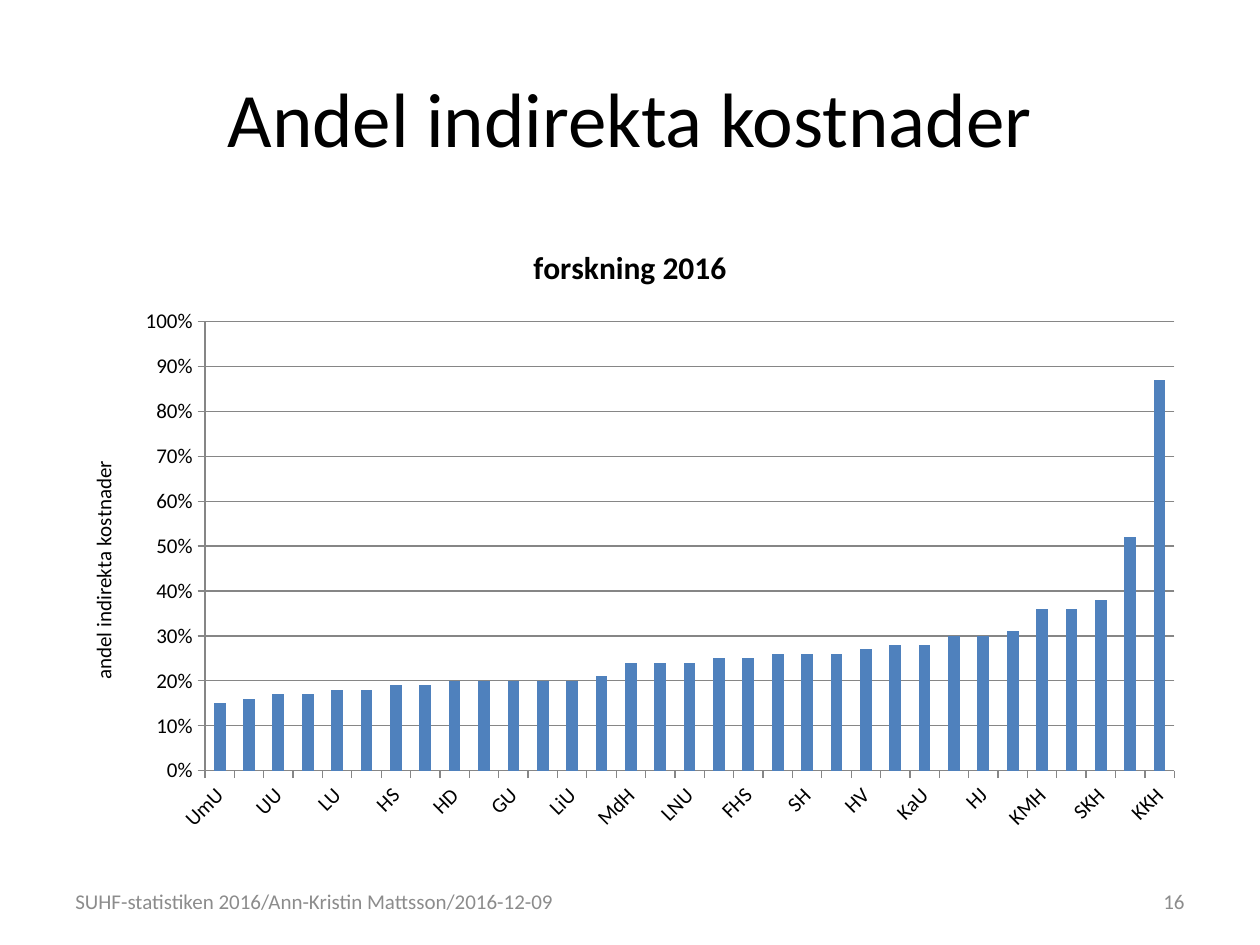
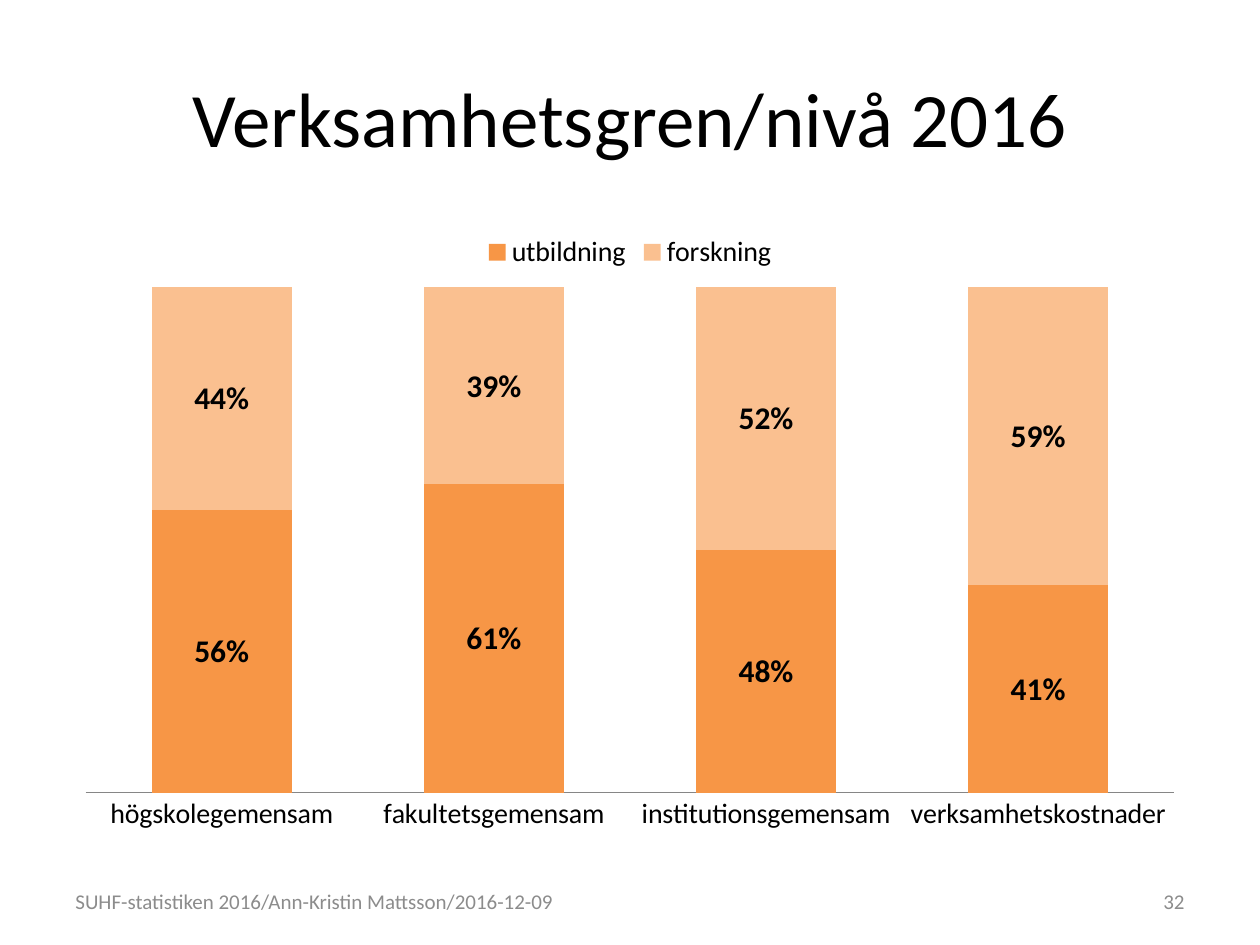
from pptx import Presentation
from pptx.chart.data import CategoryChartData
from pptx.dml.color import RGBColor
from pptx.enum.chart import XL_CHART_TYPE, XL_LEGEND_POSITION, XL_TICK_MARK
from pptx.enum.text import MSO_ANCHOR, PP_ALIGN
from pptx.util import Inches, Pt

FOOTER = "SUHF-statistiken 2016/Ann-Kristin Mattsson/2016-12-09"
UNIVERSITIES = (
    "UmU KI UU GIH LU LTU HS SLU HD CTH GU HH LiU KTH MdH HKr LNU BTH FHS ÖU "
    "SH SU HV HiG KaU MAH HJ MiU KMH HB SKH KF KKH"
).split()
RESEARCH_SHARES = [
    0.15, 0.16, 0.17, 0.17, 0.18, 0.18, 0.19, 0.19, 0.2, 0.2, 0.2,
    0.2, 0.2, 0.21, 0.24, 0.24, 0.24, 0.25, 0.25, 0.26, 0.26, 0.26,
    0.27, 0.28, 0.28, 0.3, 0.3, 0.31, 0.36, 0.36, 0.38, 0.52, 0.87,
]
LEVELS = ["högskolegemensam", "fakultetsgemensam",
          "institutionsgemensam", "verksamhetskostnader"]
EDUCATION_SHARES = [0.56, 0.61, 0.48, 0.41]
RESEARCH_LEVEL_SHARES = [0.44, 0.39, 0.52, 0.59]


def rgb(value):
    return RGBColor.from_string(value)


def set_all(target, values):
    for name, value in values.items():
        setattr(target, name, value)


class Deck:
    FONT = "Calibri"
    BLACK, GREY, AXIS = "000000", "8C8C8C", "868686"
    BLUE, ORANGE, PEACH = "4F81BD", "F79646", "FAC090"
    PERCENT = {"number_format": "0%", "number_format_is_linked": False}

    def __init__(self):
        self.presentation = Presentation()
        self.presentation.slide_width = Inches(10)
        self.presentation.slide_height = Inches(7.5)
        self.slide = None

    def style(self, font, size, color=BLACK, bold=False):
        set_all(font, {"name": self.FONT, "size": Pt(size), "bold": bold})
        font.color.rgb = rgb(color)

    def text(self, words, box, size, color, align):
        frame = self.slide.shapes.add_textbox(*map(Inches, box)).text_frame
        set_all(frame, {"word_wrap": True, "vertical_anchor": MSO_ANCHOR.MIDDLE})
        paragraph = frame.paragraphs[0]
        paragraph.alignment = align
        run = paragraph.add_run()
        run.text = words
        self.style(run.font, size, color)

    def add_slide(self, title, number, footer_width):
        """Start a slide with its title, footer and slide number."""
        self.slide = self.presentation.slides.add_slide(
            self.presentation.slide_layouts[6])
        self.text(title, (0.5, 0.3, 9, 1.25), 44, self.BLACK, PP_ALIGN.CENTER)
        self.text(FOOTER, (0.5, 6.95, footer_width, 0.4), 12, self.GREY,
                  PP_ALIGN.LEFT)
        self.text(number, (7.17, 6.95, 2.33, 0.4), 12, self.GREY, PP_ALIGN.RIGHT)

    def chart(self, kind, categories, series, plot_format):
        """Add a column chart; series holds (name, values, colour) tuples."""
        data = CategoryChartData(number_format="0%")
        data.categories = categories
        for name, values, _ in series:
            data.add_series(name, values)
        chart = self.slide.shapes.add_chart(
            kind, Inches(0.5), Inches(1.75), Inches(9), Inches(4.95), data).chart
        self.style(chart.font, 10)
        set_all(chart, {"has_title": False, "has_legend": False})
        plot = chart.plots[0]
        set_all(plot, {"vary_by_categories": False, **plot_format})
        for columns, (_, _, color) in zip(plot.series, series):
            columns.format.fill.solid()
            columns.format.fill.fore_color.rgb = rgb(color)
            columns.invert_if_negative = False
        return chart

    def line(self, line_format):
        line_format.color.rgb = rgb(self.AXIS)
        line_format.width = Pt(0.75)

    def axis(self, axis, size, tick, gridlines=False):
        set_all(axis, {"major_tick_mark": tick,
                       "minor_tick_mark": XL_TICK_MARK.NONE,
                       "has_major_gridlines": gridlines})
        self.style(axis.tick_labels.font, size)
        self.line(axis.format.line)
        if gridlines:
            self.line(axis.major_gridlines.format.line)

    def heading(self, owner, words, size, bold):
        """Give a chart or an axis its title."""
        owner.has_title = True
        title = owner.chart_title if hasattr(owner, "chart_title") else owner.axis_title
        run = title.text_frame.paragraphs[0].add_run()
        run.text = words
        self.style(run.font, size, bold=bold)

    def legend(self, chart, size):
        chart.has_legend = True
        set_all(chart.legend, {"position": XL_LEGEND_POSITION.TOP,
                               "include_in_layout": False})
        self.style(chart.legend.font, size)

    def value_labels(self, series, size):
        labels = series.data_labels
        set_all(labels, {"show_value": True, **self.PERCENT})
        self.style(labels.font, size, bold=True)


def indirect_costs(deck):
    deck.add_slide("Andel indirekta kostnader", "16", 4.97)
    chart = deck.chart(XL_CHART_TYPE.COLUMN_CLUSTERED, UNIVERSITIES,
                       [("forskning 2016", RESEARCH_SHARES, deck.BLUE)],
                       {"gap_width": 150})
    deck.heading(chart, "forskning 2016", 18, True)
    universities, shares = chart.category_axis, chart.value_axis
    deck.axis(universities, 12, XL_TICK_MARK.OUTSIDE)
    slant = universities.tick_labels.font._element.getparent().getparent().getparent()
    slant.bodyPr.set("rot", "-2700000")
    deck.axis(shares, 12, XL_TICK_MARK.OUTSIDE, gridlines=True)
    set_all(shares, {"minimum_scale": 0, "maximum_scale": 1, "major_unit": 0.1})
    set_all(shares.tick_labels, deck.PERCENT)
    deck.heading(shares, "andel indirekta kostnader", 12, False)


def levels(deck):
    deck.add_slide("Verksamhetsgren/nivå 2016", "32", 4.58)
    chart = deck.chart(XL_CHART_TYPE.COLUMN_STACKED_100, LEVELS,
                       [("utbildning", EDUCATION_SHARES, deck.ORANGE),
                        ("forskning", RESEARCH_LEVEL_SHARES, deck.PEACH)],
                       {"gap_width": 95, "overlap": 100})
    deck.legend(chart, 16)
    deck.axis(chart.category_axis, 16, XL_TICK_MARK.NONE)
    set_all(chart.value_axis, {"visible": False, "has_major_gridlines": False})
    for branch in chart.plots[0].series:
        deck.value_labels(branch, 18)


def main():
    deck = Deck()
    indirect_costs(deck)
    levels(deck)
    deck.presentation.save("out.pptx")


if __name__ == "__main__":
    main()
